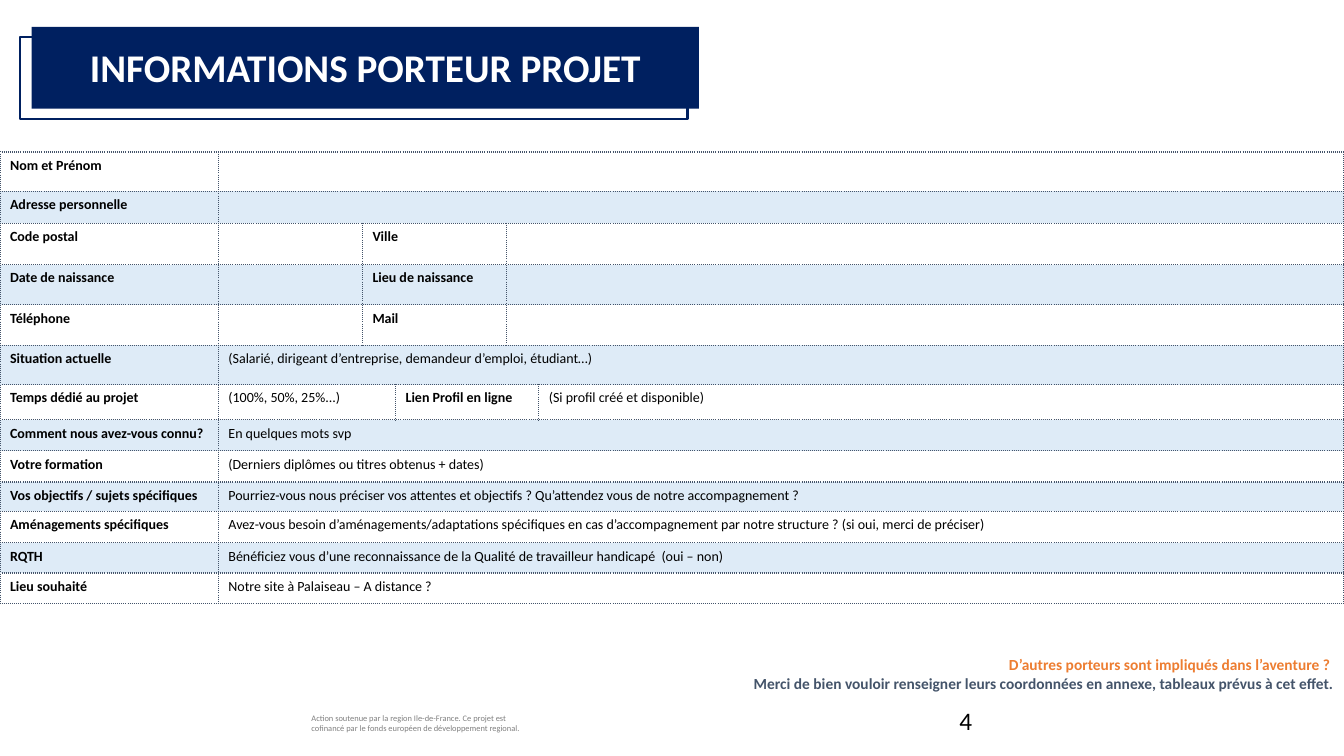
from dataclasses import dataclass

from lxml import etree
from pptx import Presentation
from pptx.dml.color import RGBColor
from pptx.enum.shapes import MSO_SHAPE
from pptx.enum.text import MSO_ANCHOR, PP_ALIGN
from pptx.oxml.ns import qn
from pptx.shapes.autoshape import Shape
from pptx.slide import Slide
from pptx.table import _Cell
from pptx.text.text import TextFrame
from pptx.util import Inches, Length, Pt

RECTANGLE = MSO_SHAPE.RECTANGLE
LEFT, CENTER, RIGHT = PP_ALIGN.LEFT, PP_ALIGN.CENTER, PP_ALIGN.RIGHT
TOP, MIDDLE = MSO_ANCHOR.TOP, MSO_ANCHOR.MIDDLE

# The slide is a grid of 160 columns by 90 rows of square cells
GRID_COLUMNS, GRID_ROWS = 160, 90


@dataclass(frozen=True)
class Theme:
    font: str = "Calibri"
    navy: str = "002060"
    slate: str = "44546A"
    orange: str = "ED7D31"
    band: str = "DEEBF7"
    gray: str = "808080"
    black: str = "000000"
    white: str = "FFFFFF"
    title_size: float = 28
    number_size: float = 18
    note_size: float = 11
    form_size: float = 10
    funding_size: float = 6
    frame_width: float = 1.5
    border_width: float = 1


THEME = Theme()


@dataclass(frozen=True)
class Area:
    column: float
    row: float
    columns: float
    rows: float

    def lengths(self) -> list[Length]:
        return [cells(n) for n in (self.column, self.row, self.columns, self.rows)]


@dataclass(frozen=True)
class Line:
    text: str
    size: float
    color: str
    bold: bool = False
    align: PP_ALIGN = LEFT


@dataclass(frozen=True)
class Entry:
    """One form cell: its text, first table column and number of columns."""
    text: str
    column: int
    span: int = 1
    bold: bool = False


@dataclass(frozen=True)
class FormRow:
    height: float
    entries: tuple[Entry, ...]


def cells(count: float) -> Length:
    return Inches(count / 12)


def rgb(color: str) -> RGBColor:
    return RGBColor.from_string(color)


def write(frame: TextFrame, *lines: Line) -> None:
    frame.word_wrap = True
    frame.text = "\n".join(line.text for line in lines)
    for paragraph, line in zip(frame.paragraphs, lines):
        paragraph.alignment = line.align
        for run in paragraph.runs:
            run.font.name = THEME.font
            run.font.size = Pt(line.size)
            run.font.bold = line.bold
            run.font.color.rgb = rgb(line.color)


def add_text(slide: Slide, area: Area, line: Line) -> None:
    write(slide.shapes.add_textbox(*area.lengths()).text_frame, line)


def add_panel(slide: Slide, area: Area, fill: str | None, border: str | None = None) -> Shape:
    panel = slide.shapes.add_shape(RECTANGLE, *area.lengths())
    panel.shadow.inherit = False
    if fill:
        panel.fill.solid()
        panel.fill.fore_color.rgb = rgb(fill)
    else:
        panel.fill.background()
    if border:
        panel.line.color.rgb = rgb(border)
        panel.line.width = Pt(THEME.frame_width)
    else:
        panel.line.fill.background()
    return panel


def style_cell(cell: _Cell, fill: str | None) -> None:
    properties = cell._tc.get_or_add_tcPr()
    for side in ("a:lnL", "a:lnR", "a:lnT", "a:lnB"):
        border = etree.SubElement(properties, qn(side), w=str(Pt(THEME.border_width)))
        paint = etree.SubElement(border, qn("a:solidFill"))
        etree.SubElement(paint, qn("a:srgbClr"), val=THEME.slate)
        etree.SubElement(border, qn("a:prstDash"), val="sysDot")
    if fill:
        cell.fill.solid()
        cell.fill.fore_color.rgb = rgb(fill)
    else:
        cell.fill.background()
    cell.vertical_anchor = TOP


def add_form(slide: Slide, area: Area, widths: tuple[float, ...], rows: list[FormRow]) -> None:
    form = slide.shapes.add_table(len(rows), len(widths), *area.lengths()).table
    form.first_row = form.horz_banding = False
    for column, width in zip(form.columns, widths):
        column.width = cells(width)
    for index, row in enumerate(rows):
        form.rows[index].height = cells(row.height)
        for column in range(len(widths)):
            style_cell(form.cell(index, column), THEME.band if index % 2 else None)
        for entry in row.entries:
            cell = form.cell(index, entry.column)
            if entry.span > 1:
                cell.merge(form.cell(index, entry.column + entry.span - 1))
            if entry.text:
                write(cell.text_frame, Line(entry.text, THEME.form_size, THEME.black, entry.bold))
            else:  # an empty cell keeps the form's type size
                etree.SubElement(cell.text_frame.paragraphs[0]._p, qn("a:endParaRPr"),
                                 sz=str(int(THEME.form_size * 100)))


def wide(height: float, label: str, answer: str = "") -> FormRow:
    return FormRow(height, (Entry(label, 0, bold=True), Entry(answer, 1, 5)))


def paired(height: float, label: str, second: str) -> FormRow:
    return FormRow(height, (Entry(label, 0, bold=True), Entry("", 1),
                            Entry(second, 2, 2, True), Entry("", 4, 2)))


FORM_COLUMNS = (26, 17.15, 3.95, 13.2, 3.85, 95.85)
FORM_ROWS = [
    wide(4.7, "Nom et Prénom"),
    wide(3.8, "Adresse personnelle"),
    paired(4.9, "Code postal", "Ville"),
    paired(4.8, "Date de naissance", "Lieu de naissance"),
    paired(4.8, "Téléphone", "Mail"),
    wide(4.7, "Situation actuelle", "(Salarié, dirigeant d’entreprise, demandeur d’emploi, étudiant…)"),
    FormRow(4.2, (Entry("Temps dédié au projet", 0, bold=True), Entry("(100%, 50%, 25%...)", 1, 2),
                  Entry("Lien Profil en ligne", 3, 2, True), Entry("(Si profil créé et disponible)", 5))),
    wide(3.7, "Comment nous avez-vous connu?", "En quelques mots svp"),
    wide(3.7, "Votre formation", "(Derniers diplômes ou titres obtenus + dates)"),
    wide(3.5, "Vos objectifs / sujets spécifiques",
         "Pourriez-vous nous préciser vos attentes et objectifs ? Qu’attendez vous de notre accompagnement ?"),
    wide(3.75, "Aménagements spécifiques",
         "Avez-vous besoin d’aménagements/adaptations spécifiques en cas d’accompagnement "
         "par notre structure ? (si oui, merci de préciser)"),
    wide(3.6, "RQTH", "Bénéficiez vous d’une reconnaissance de la Qualité de travailleur handicapé  (oui – non)"),
    wide(3.6, "Lieu souhaité", "Notre site à Palaiseau – A distance ?"),
]


def main() -> None:
    deck = Presentation()
    deck.slide_width, deck.slide_height = cells(GRID_COLUMNS), cells(GRID_ROWS)
    slide = deck.slides.add_slide(deck.slide_layouts[6])

    # Funding mention and note about other project holders
    add_text(slide, Area(35.9, 84.35, 28.55, 3.6),
             Line("Action soutenue par la region Ile-de-France. Ce projet est cofinancé par le fonds "
                  "européen de développement regional.", THEME.funding_size, THEME.gray))
    annex_note = add_panel(slide, Area(65.65, 76.55, 94.35, 7.3), THEME.white).text_frame
    annex_note.vertical_anchor = MIDDLE
    write(annex_note,
          Line("D’autres porteurs sont impliqués dans l’aventure ? ", THEME.note_size, THEME.orange, True, RIGHT),
          Line("Merci de bien vouloir renseigner leurs coordonnées en annexe, tableaux prévus à cet effet.",
               THEME.note_size, THEME.slate, True, RIGHT))

    # Form
    form_height = sum(row.height for row in FORM_ROWS)
    add_form(slide, Area(0, 18.1, GRID_COLUMNS, form_height), FORM_COLUMNS, FORM_ROWS)

    # Title banner over its offset frame
    add_panel(slide, Area(2.4, 4.4, 79.45, 9.75), None, THEME.navy)
    add_panel(slide, Area(3.75, 3.2, 79.45, 9.75), THEME.navy)
    add_text(slide, Area(3.75, 4.55, 79.45, 6.85),
             Line("INFORMATIONS PORTEUR PROJET", THEME.title_size, THEME.white, True, CENTER))

    # Page number
    add_text(slide, Area(113.05, 83.4, 36, 4.8), Line("4", THEME.number_size, THEME.black))

    deck.save("out.pptx")


if __name__ == "__main__":
    main()
